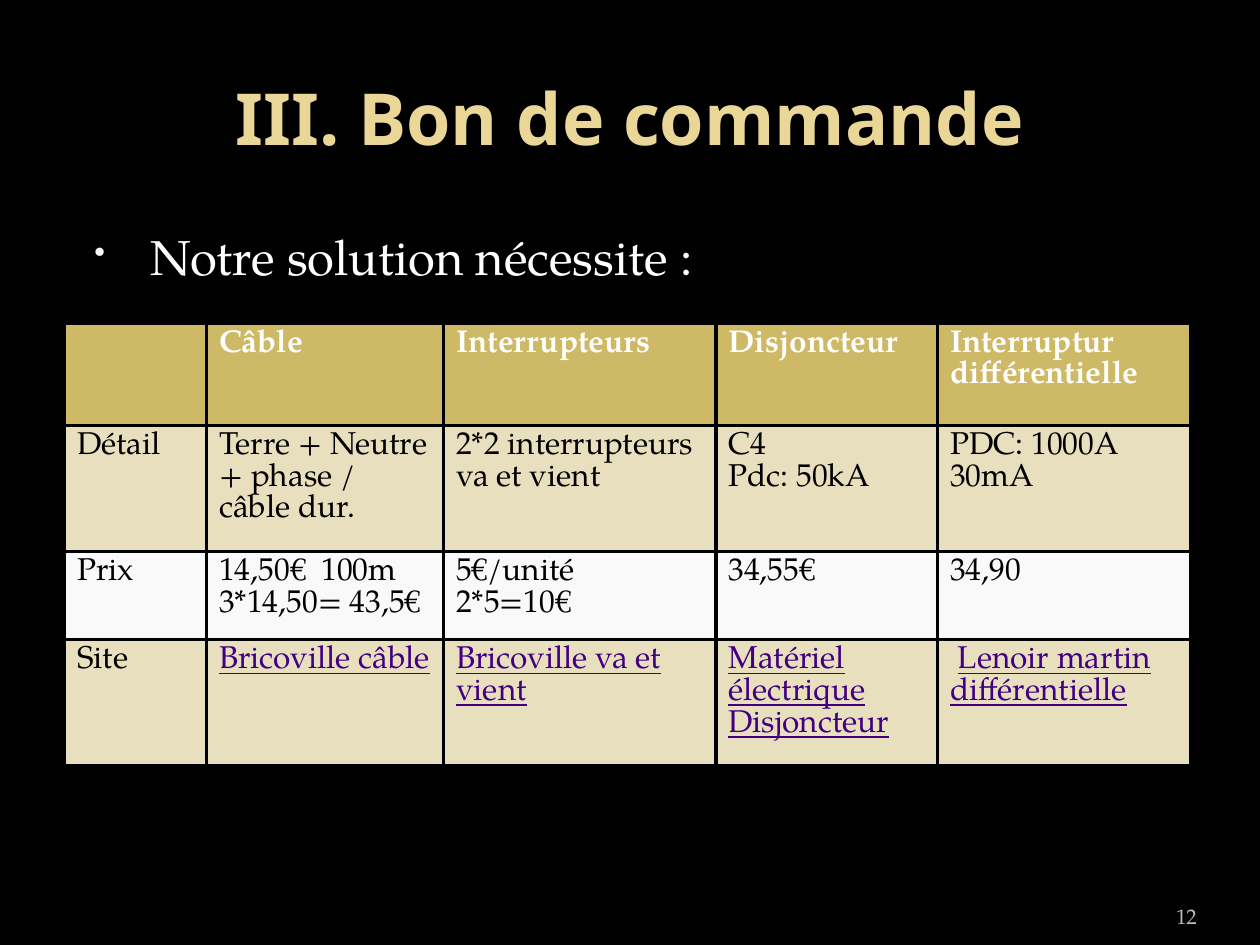
from dataclasses import dataclass
from typing import Any

from lxml.etree import SubElement
from pptx import Presentation
from pptx.dml.color import RGBColor as Rgb
from pptx.enum.text import MSO_ANCHOR as Anchor, PP_ALIGN as Align
from pptx.oxml.ns import qn
from pptx.util import Pt


@dataclass(frozen=True)
class Theme:
    background: str = "000000"
    title: str = "EAD696"
    white: str = "FFFFFF"
    black: str = "000000"
    bullet: str = "F9F9F9"
    page: str = "BDBDBD"
    link: str = "410082"
    header_fill: str = "CEB966"
    band_fill: str = "E8DFBE"
    plain_fill: str = "F9F9F9"
    heading_font: str = "Noto Sans"
    body_font: str = "TeX Gyre Pagella"
    title_size: float = 41
    body_size: float = 28
    table_size: float = 18
    page_size: float = 12
    border: float = 2.25


@dataclass(frozen=True)
class Style:
    size: float
    color: str
    font: str
    bold: bool = False
    underline: bool = False


@dataclass(frozen=True)
class TextBlock:
    text: str
    box: tuple[float, float, float, float]
    style: Style
    frame: dict[str, Any]
    paragraph: dict[str, Any]


@dataclass(frozen=True)
class OrderRow:
    height: float
    fill: str
    label: str
    entries: tuple[str, ...]
    style: Style
    entry_style: Style


THEME = Theme()
HEADER = Style(THEME.table_size, THEME.white, THEME.body_font, bold=True)
CELL = Style(THEME.table_size, THEME.black, THEME.body_font)
LINK = Style(THEME.table_size, THEME.link, THEME.body_font, underline=True)

TITLE = TextBlock(
    "III. Bon de commande", (36, 21.6, 648, 90),
    Style(THEME.title_size, THEME.title, THEME.heading_font, bold=True),
    {"vertical_anchor": Anchor.MIDDLE}, {"alignment": Align.CENTER})
INTRO = TextBlock(
    "Notre solution nécessite :", (36, 126, 648, 370.8),
    Style(THEME.body_size, THEME.white, THEME.body_font),
    {"vertical_anchor": Anchor.TOP}, {"space_before": Pt(5.6)})
PAGE = TextBlock(
    "12", (624.24, 505.44, 59.76, 28.8),
    Style(THEME.page_size, THEME.page, THEME.body_font),
    {"vertical_anchor": Anchor.BOTTOM, "margin_left": 0, "margin_right": 0},
    {"alignment": Align.RIGHT})

TABLE_LEFT, TABLE_TOP = 36.9, 185
COLUMN_WIDTHS = (81.2, 135.4, 155.6, 126.6, 144.8)
ORDER = (
    OrderRow(58, THEME.header_fill, "",
             ("Câble", "Interrupteurs", "Disjoncteur", "Interruptur différentielle"),
             HEADER, HEADER),
    OrderRow(62, THEME.band_fill, "Détail",
             ("Terre + Neutre + phase / câble dur.",
              "2*2 interrupteurs va et vient",
              "C4\nPdc: 50kA", "PDC: 1000A\n30mA"), CELL, CELL),
    OrderRow(43.6, THEME.plain_fill, "Prix",
             ("14,50€  100m\n3*14,50= 43,5€", "5€/unité\n2*5=10€",
              "34,55€", "34,90"), CELL, CELL),
    OrderRow(61, THEME.band_fill, "Site",
             ("Bricoville câble", "Bricoville va et vient",
              "Matériel électrique Disjoncteur",
              " Lenoir martin différentielle"), CELL, LINK),
)


def apply(target: Any, values: dict[str, Any]) -> None:
    for name, value in values.items():
        setattr(target, name, value)


def add_run(paragraph: Any, text: str, style: Style) -> None:
    run = paragraph.add_run()
    run.text = text
    apply(run.font, {"size": Pt(style.size), "name": style.font,
                     "bold": style.bold, "underline": style.underline})
    run.font.color.rgb = Rgb.from_string(style.color)


def add_text(slide: Any, block: TextBlock) -> Any:
    frame = slide.shapes.add_textbox(*map(Pt, block.box)).text_frame
    apply(frame, {"word_wrap": True, **block.frame})
    paragraph = frame.paragraphs[0]
    apply(paragraph, block.paragraph)
    add_run(paragraph, block.text, block.style)
    return paragraph


def add_bullet(paragraph: Any) -> None:
    properties = paragraph._p.get_or_add_pPr()
    properties.set("marL", str(Pt(43.2)))
    properties.set("indent", str(Pt(-32.4)))
    color = SubElement(properties, qn("a:buClr"))
    SubElement(color, qn("a:srgbClr"), val=THEME.bullet)
    SubElement(properties, qn("a:buSzPct"), val="65000")
    SubElement(properties, qn("a:buChar"), char="•")


def add_borders(cell: Any) -> None:
    """Put the four borders before the fill, as the schema orders them."""
    properties = cell._tc.get_or_add_tcPr()
    for index, side in enumerate(("lnL", "lnR", "lnT", "lnB")):
        line = SubElement(properties, qn(f"a:{side}"), w=str(Pt(THEME.border)))
        fill = SubElement(line, qn("a:solidFill"))
        SubElement(fill, qn("a:srgbClr"), val=THEME.black)
        properties.insert(index, line)


def fill_cell(cell: Any, text: str, style: Style, fill: str) -> None:
    cell.fill.solid()
    cell.fill.fore_color.rgb = Rgb.from_string(fill)
    add_borders(cell)
    frame = cell.text_frame
    for index, line in enumerate(text.split("\n")):
        paragraph = frame.add_paragraph() if index else frame.paragraphs[0]
        words = line.lstrip()
        if words != line:
            add_run(paragraph, " ", CELL)
        if words:
            add_run(paragraph, words, style)


def add_order_table(slide: Any) -> None:
    width = sum(COLUMN_WIDTHS)
    height = sum(row.height for row in ORDER)
    table = slide.shapes.add_table(
        len(ORDER), len(COLUMN_WIDTHS), Pt(TABLE_LEFT), Pt(TABLE_TOP),
        Pt(width), Pt(height)).table
    for column, column_width in zip(table.columns, COLUMN_WIDTHS):
        column.width = Pt(column_width)
    for row, order in zip(table.rows, ORDER):
        row.height = Pt(order.height)
        label_cell, *entry_cells = row.cells
        fill_cell(label_cell, order.label, order.style, order.fill)
        for cell, entry in zip(entry_cells, order.entries):
            fill_cell(cell, entry, order.entry_style, order.fill)


def main() -> None:
    deck = Presentation()
    apply(deck, {"slide_width": Pt(720), "slide_height": Pt(540)})
    slide = deck.slides.add_slide(deck.slide_layouts[6])
    background = slide.background.fill
    background.solid()
    background.fore_color.rgb = Rgb.from_string(THEME.background)
    add_text(slide, TITLE)
    add_bullet(add_text(slide, INTRO))
    add_text(slide, PAGE)
    add_order_table(slide)
    deck.save("out.pptx")


if __name__ == "__main__":
    main()
